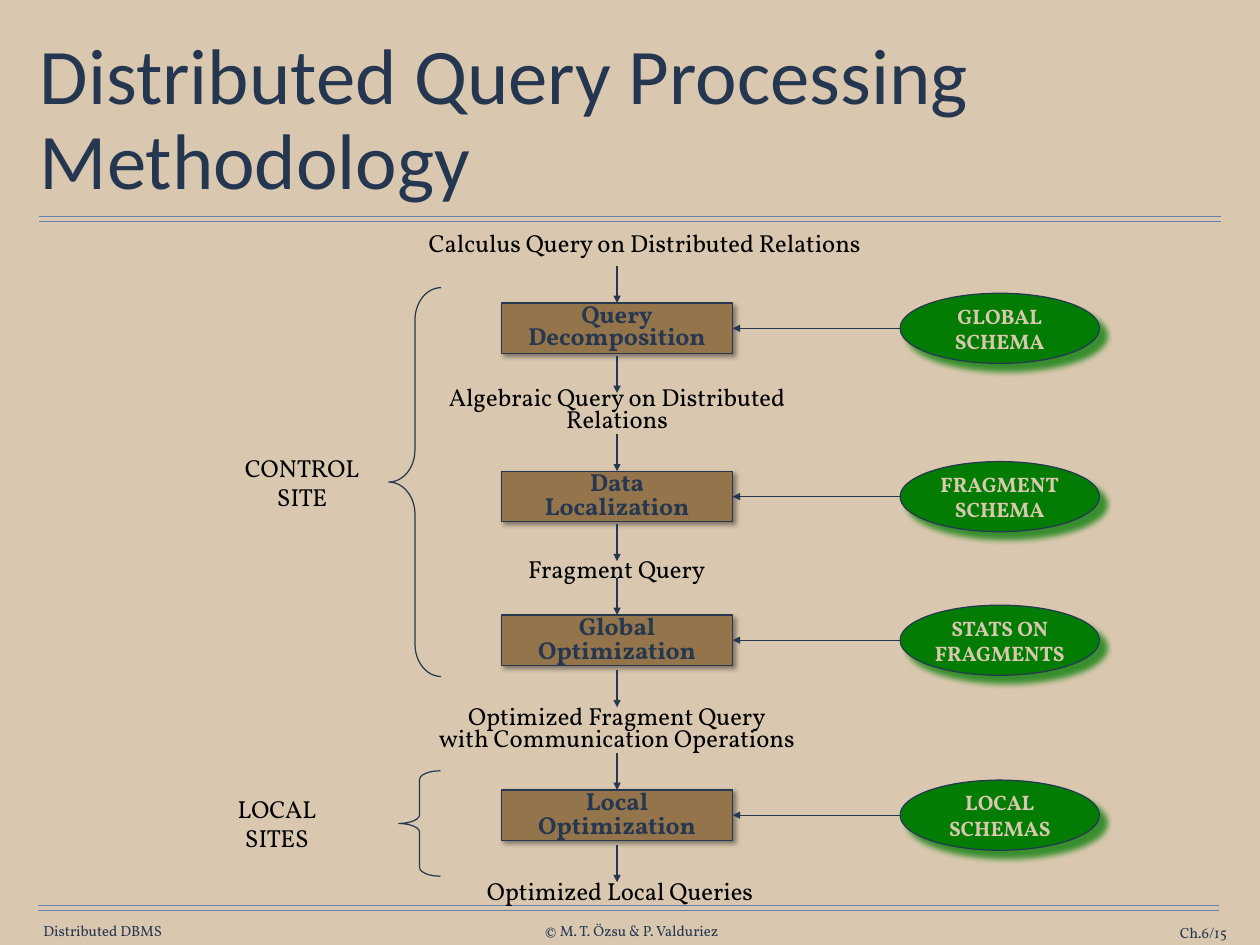
from dataclasses import dataclass

from lxml import etree
from pptx import Presentation
from pptx.dml.color import RGBColor
from pptx.enum import shapes, text
from pptx.oxml import ns
from pptx.util import Pt


@dataclass(frozen=True)
class Theme:
    background: str = "D9C8AF"
    navy: str = "263750"
    title: str = "253750"
    black: str = "000000"
    rule: str = "6682AA"
    process: str = "93744B"
    schema: str = "037C03"
    body_font: str = "Vollkorn"
    title_font: str = "Calibri"
    title_size: float = 64
    label_size: float = 20
    schema_size: float = 17
    footer_size: float = 12


THEME = Theme()
CENTER, LEFT, RIGHT = text.PP_ALIGN.CENTER, text.PP_ALIGN.LEFT, text.PP_ALIGN.RIGHT
TOP, MIDDLE = text.MSO_ANCHOR.TOP, text.MSO_ANCHOR.MIDDLE


def apply(target, **values):
    for name, value in values.items():
        setattr(target, name, value)


def points(box):
    return [Pt(length) for length in box]


def write(shape, lines, size, color, bold=False, font=THEME.body_font, align=CENTER,
          spacing=1.0, anchor=MIDDLE, insets=(10, 5), wrap=False):
    frame = shape.text_frame
    across, down = points(insets)
    apply(frame, word_wrap=wrap, auto_size=text.MSO_AUTO_SIZE.NONE, vertical_anchor=anchor,
          margin_left=across, margin_right=across, margin_top=down, margin_bottom=down)
    for index, line in enumerate(lines):
        paragraph = frame.add_paragraph() if index else frame.paragraphs[0]
        paragraph.text = line
        apply(paragraph, alignment=align, line_spacing=spacing)
        apply(paragraph.font, name=font, size=Pt(size), bold=bold)
        paragraph.font.color.rgb = RGBColor.from_string(color)


def add_text(slide, box, lines, **formats):
    write(slide.shapes.add_textbox(*points(box)), lines, **formats)


def outline(shape, color):
    shape.line.color.rgb = RGBColor.from_string(color)
    shape.line.width = Pt(1)


def add_line(slide, start, end, color=THEME.navy, arrow=False):
    line = slide.shapes.add_connector(
        shapes.MSO_CONNECTOR.STRAIGHT, *points((*start, *end)))
    outline(line, color)
    if arrow:
        etree.SubElement(line.line._get_or_add_ln(), ns.qn("a:tailEnd"), type="triangle")
    etree.SubElement(line._element.spPr, ns.qn("a:effectLst"))
    return line


def add_shape(slide, kind, box, fill=None):
    shape = slide.shapes.add_shape(kind, *points(box))
    shape.shadow.inherit = False
    if fill:
        shape.fill.solid()
        shape.fill.fore_color.rgb = RGBColor.from_string(fill)
    else:
        shape.fill.background()
    outline(shape, THEME.navy)
    return shape


def cast_shadow(shape, color, opacity, blur, distance):
    """Cast a soft shadow to the lower right; opacity is in percent."""
    effects = shape._element.spPr.find(ns.qn("a:effectLst"))
    shadow = etree.SubElement(effects, ns.qn("a:outerShdw"), blurRad=str(Pt(blur)),
                              dist=str(Pt(distance)), dir=str(45 * 60000),
                              algn="ctr", rotWithShape="0")
    tint = etree.SubElement(shadow, ns.qn("a:srgbClr"), val=color)
    etree.SubElement(tint, ns.qn("a:alpha"), val=str(opacity * 1000))


def add_title(slide, box, wording):
    title = slide.shapes.title
    left, top, width, height = points(box)
    apply(title, left=left, top=top, width=width, height=height)
    write(title, [wording], THEME.title_size, THEME.title, font=THEME.title_font,
          align=LEFT, spacing=0.9, insets=(4.3, 4.3), wrap=True)


def add_double_rule(slide, box):
    left, top, width, gap = box
    for y in (top, top + gap):
        add_line(slide, (left, y), (left + width, y), THEME.rule)


def add_footer(slide, box):
    left, top, width, height = box
    parts = [
        ("Distributed DBMS", 0, 0, 99.4, CENTER),
        ("© M. T. Özsu & P. Valduriez", 404.7, 0, 149.8, CENTER),
        ("Ch.6/15", width - 110.9, 1.5, 110.9, RIGHT),
    ]
    for wording, x, y, part_width, align in parts:
        add_text(slide, (left + x, top + y, part_width, height), [wording],
                 size=THEME.footer_size, color=THEME.navy, align=align, insets=(0, 0),
                 wrap=align == RIGHT)


def add_stage(slide, box, process_lines, schema_lines, spacing, gap):
    """Place a process on the left, its schema on the right, and the arrows between."""
    left, top, width, height = box
    process_width, process_height, schema_width, arrow_length = 188, 41, 162, 30
    process_top = top + (height - process_height) / 2
    process_bottom = process_top + process_height
    center, middle = left + process_width / 2, top + height / 2
    schema_left = left + width - schema_width

    process = add_shape(slide, shapes.MSO_SHAPE.RECTANGLE,
                        (left, process_top, process_width, process_height), THEME.process)
    cast_shadow(process, THEME.black, 40, 4, 3)
    write(process, process_lines, THEME.label_size, THEME.navy, bold=True, spacing=spacing)

    schema = add_shape(slide, shapes.MSO_SHAPE.OVAL,
                       (schema_left, top, schema_width, height), THEME.schema)
    cast_shadow(schema, THEME.schema, 75, 5, 8.5)
    write(schema, schema_lines, THEME.schema_size, THEME.background, bold=True)

    add_line(slide, (center, process_top - arrow_length), (center, process_top),
             arrow=True).end_connect(process, 0)
    add_line(slide, (schema_left, middle), (left + process_width, middle),
             arrow=True).end_connect(process, 3)
    add_line(slide, (center, process_bottom + gap),
             (center, process_bottom + gap + arrow_length), arrow=True)


def add_site(slide, box, lines, brace_box, curve):
    """Label a group of stages and bracket it."""
    add_text(slide, box, lines, size=THEME.label_size, color=THEME.black, anchor=TOP)
    brace = add_shape(slide, shapes.MSO_SHAPE.LEFT_BRACE, brace_box)
    brace.adjustments[0] = curve


def add_query_flow(slide, box):
    left, top, width, height = box
    labels = [
        (["Calculus Query on Distributed Relations"], 319, 0, 410, 0.75),
        (["Algebraic Query on Distributed", "Relations"], 349.2, 125.2, 304.6, 0.75),
        (["Fragment Query"], 416.2, 259.2, 170, 1),
        (["Optimized Fragment Query", "with Communication Operations"],
         343.4, 384.4, 316, 0.75),
        (["Optimized Local Queries"], 370, 527, 267.8, 0.75),
    ]
    for lines, x, y, label_width, spacing in labels:
        add_text(slide, (x, top + y, label_width, 24 * len(lines)), lines,
                 size=THEME.label_size, color=THEME.black, spacing=spacing, anchor=TOP)

    stages = [
        (52.5, ["Query", "Decomposition"], ["GLOBAL", "SCHEMA"], 0.75, 2),
        (189.3, ["Data", "Localization"], ["FRAGMENT", "SCHEMA"], 0.8, 2),
        (306, ["Global", "Optimization"], ["STATS ON", "FRAGMENTS"], 0.8, 4),
        (448.2, ["Local", "Optimization"], ["LOCAL", "SCHEMAS"], 0.8, 4),
    ]
    for y, process_lines, schema_lines, spacing, gap in stages:
        add_stage(slide, (left + 227.5, top + y, width - 227.5, 57),
                  process_lines, schema_lines, spacing, gap)

    add_site(slide, (left + 2.9, top + 177, 125.3, 58.3), ["CONTROL", "SITE"],
             (left + 136, top + 48, 42.5, 316), 0.617)
    add_site(slide, (left, top + 454, 90, 58.3), ["LOCAL", "SITES"],
             (left + 144, top + 440.6, 34, 85.7), 0.208)


def main():
    presentation = Presentation()
    apply(presentation, slide_width=Pt(1024), slide_height=Pt(768))
    slide = presentation.slides.add_slide(presentation.slide_layouts[5])
    slide.background.fill.solid()
    slide.background.fill.fore_color.rgb = RGBColor.from_string(THEME.background)
    add_double_rule(slide, (31.7, 175.7, 960.5, 4.3))
    add_double_rule(slide, (31, 735.8, 959.8, 4.3))
    add_footer(slide, (33.8, 749.5, 963.4, 14.4))
    add_title(slide, (28, 35.3, 967.7, 126.7), "Distributed Query Processing Methodology")
    add_query_flow(slide, (180, 185.8, 713.5, 556))
    presentation.save("out.pptx")


if __name__ == "__main__":
    main()
